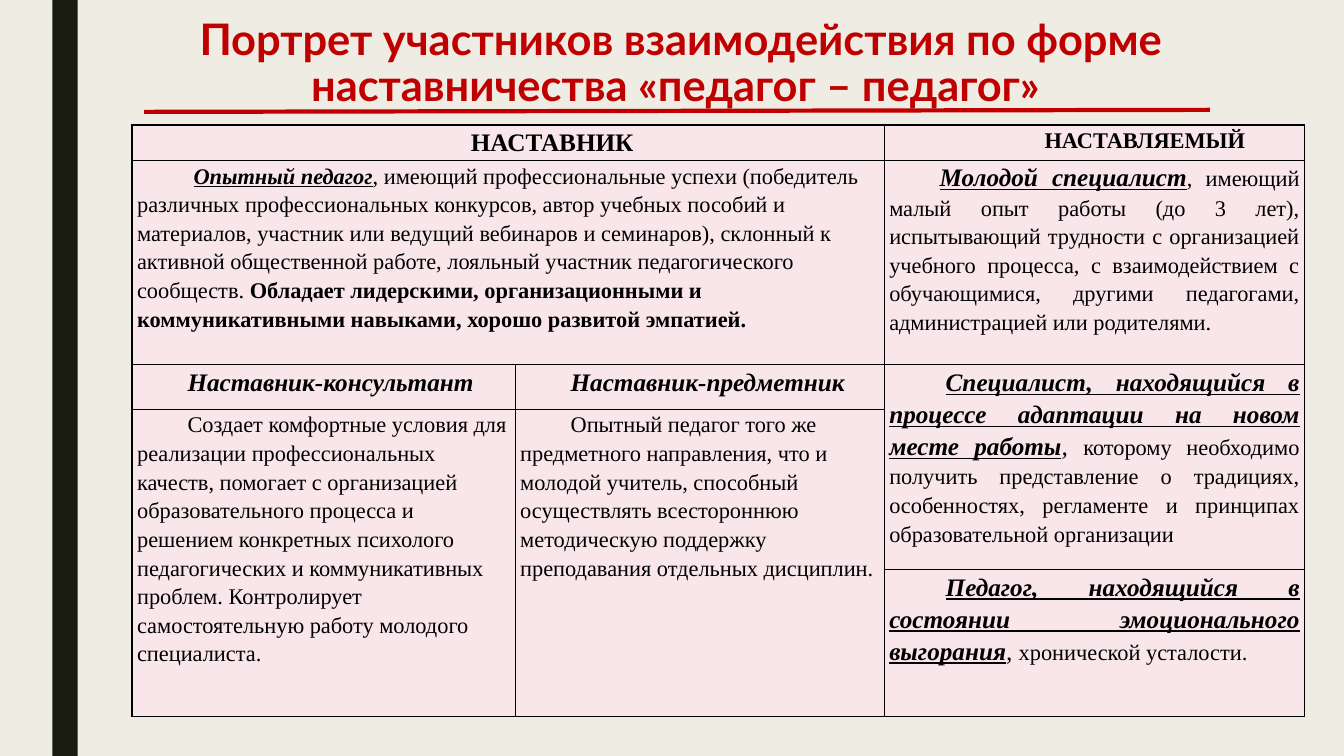
from lxml import etree
from pptx import Presentation
from pptx.dml.color import RGBColor
from pptx.enum.shapes import MSO_CONNECTOR, MSO_SHAPE
from pptx.enum.text import MSO_ANCHOR, PP_ALIGN
from pptx.oxml.ns import qn
from pptx.util import Inches, Pt

RED, BLACK, PINK = "C00000", "000000", "F9E6EA"
LEFT, JUSTIFY = PP_ALIGN.LEFT, PP_ALIGN.JUSTIFY
COLUMNS = [3.8, 3.66, 4.17]
ROWS = [0.35, 2.03, 0.44, 1.59, 1.46]

# Run styles: size, bold, italic, underline
PLAIN = (16, False, False, False)
BOLD = (16, True, False, False)
HEADING = (18, True, False, False)
SUBHEADING = (18, True, True, False)
KEY = (16, True, True, True)
BIG_KEY = (18, True, True, True)
COMMA = (18, False, True, False)

# Cells: row, column, rows spanned, columns spanned, alignment, indent, runs
PORTRAITS = [
    (0, 0, 1, 2, LEFT, 3.31, [("НАСТАВНИК", HEADING)]),
    (0, 2, 1, 1, LEFT, 1.54, [("НАСТАВЛЯЕМЫЙ", BOLD)]),
    (1, 0, 1, 2, LEFT, 0.56, [
        ("Опытный педагог", KEY),
        (", имеющий профессиональные успехи (победитель различных "
         "профессиональных конкурсов, автор учебных пособий и материалов, "
         "участник или ведущий вебинаров и семинаров), склонный к активной "
         "общественной работе, лояльный участник педагогического сообществ. ", PLAIN),
        ("Обладает лидерскими, организационными и коммуникативными навыками, "
         "хорошо развитой эмпатией.", BOLD)]),
    (1, 2, 1, 1, JUSTIFY, 0.5, [
        ("Молодой специалист", BIG_KEY),
        (", имеющий малый опыт работы (до 3 лет), испытывающий трудности с "
         "организацией учебного процесса, с взаимодействием с обучающимися, "
         "другими педагогами, администрацией или родителями.", PLAIN)]),
    (2, 0, 1, 1, LEFT, 0.5, [("Наставник-консультант", SUBHEADING)]),
    (2, 1, 1, 1, LEFT, 0.5, [("Наставник-предметник", SUBHEADING)]),
    (2, 2, 2, 1, JUSTIFY, 0.56, [
        ("Специалист, находящийся в процессе адаптации на новом месте работы", BIG_KEY),
        (", ", COMMA),
        ("которому необходимо получить представление о традициях, особенностях, "
         "регламенте и принципах образовательной организации", PLAIN)]),
    (3, 0, 2, 1, LEFT, 0.5, [
        ("Создает комфортные условия для реализации профессиональных качеств, "
         "помогает с организацией образовательного процесса и решением конкретных "
         "психолого педагогических и коммуникативных проблем. Контролирует "
         "самостоятельную работу молодого специалиста.", PLAIN)]),
    (3, 1, 2, 1, LEFT, 0.5, [
        ("Опытный педагог того же предметного направления, что и молодой учитель, "
         "способный осуществлять всестороннюю методическую поддержку преподавания "
         "отдельных дисциплин.", PLAIN)]),
    (4, 2, 1, 1, JUSTIFY, 0.56, [
        ("Педагог, находящийся в состоянии эмоционального выгорания", BIG_KEY),
        (", ", COMMA),
        ("хронической усталости.", PLAIN)]),
]


def color(value):
    return RGBColor.from_string(value)


def add_run(paragraph, text, style, font, hex_color):
    run = paragraph.add_run()
    run.text = text
    run.font.size = Pt(style[0])
    run.font.bold, run.font.italic, run.font.underline = style[1:]
    run.font.name = font
    run.font.color.rgb = color(hex_color)


def style_cell(cell):
    cell.fill.solid()
    cell.fill.fore_color.rgb = color(PINK)
    cell.margin_left = cell.margin_right = Inches(0.05)
    cell.margin_top = cell.margin_bottom = 0
    # Borders come before the fill in the cell properties
    properties = cell._tc.get_or_add_tcPr()
    for position, side in enumerate(("a:lnL", "a:lnR", "a:lnT", "a:lnB")):
        border = etree.Element(qn(side), w=str(Pt(1)))
        fill = etree.SubElement(border, qn("a:solidFill"))
        etree.SubElement(fill, qn("a:srgbClr"), val=BLACK)
        properties.insert(position, border)


def add_side_band(slide, left, top, width, height):
    band = slide.shapes.add_shape(MSO_SHAPE.RECTANGLE, Inches(left), Inches(top),
                                  Inches(width), Inches(height))
    band.shadow.inherit = False
    band.fill.solid()
    band.fill.fore_color.rgb = color("191B0E")
    band.line.fill.background()


def add_title(slide, left, top, width, height):
    title = slide.shapes.add_textbox(Inches(left), Inches(top),
                                     Inches(width), Inches(height))
    frame = title.text_frame
    frame.word_wrap = True
    frame.vertical_anchor = MSO_ANCHOR.TOP
    paragraph = frame.paragraphs[0]
    paragraph.alignment = PP_ALIGN.CENTER
    paragraph.line_spacing = 0.89
    add_run(paragraph, "Портрет участников взаимодействия по форме "
            "наставничества «педагог – педагог» ",
            (31, True, False, False), "Lato", RED)

    # Slightly slanted rule under the title
    rule = slide.shapes.add_connector(
        MSO_CONNECTOR.STRAIGHT, Inches(left - 0.07), Inches(top + 0.98),
        Inches(left + width), Inches(top + 0.96))
    rule.line.color.rgb = color(RED)
    rule.line.width = Pt(3)
    etree.SubElement(rule._element.spPr, qn("a:effectLst"))


def add_portrait_table(slide, left, top):
    table = slide.shapes.add_table(
        len(ROWS), len(COLUMNS), Inches(left), Inches(top),
        Inches(sum(COLUMNS)), Inches(sum(ROWS))).table
    for column, width in zip(table.columns, COLUMNS):
        column.width = Inches(width)
    for row, height in zip(table.rows, ROWS):
        row.height = Inches(height)
    for cell in table.iter_cells():
        style_cell(cell)

    for row, column, row_span, column_span, alignment, indent, runs in PORTRAITS:
        cell = table.cell(row, column)
        if row_span * column_span > 1:
            cell.merge(table.cell(row + row_span - 1, column + column_span - 1))
        paragraph = cell.text_frame.paragraphs[0]
        paragraph.alignment = alignment
        paragraph.line_spacing = 1.15
        paragraph._p.get_or_add_pPr().set("indent", str(Inches(indent)))
        for text, style in runs:
            add_run(paragraph, text, style, "Times New Roman", BLACK)


def main():
    deck = Presentation()
    deck.slide_width, deck.slide_height = Inches(13.33), Inches(7.5)
    slide = deck.slides.add_slide(deck.slide_layouts[6])
    slide.background.fill.solid()
    slide.background.fill.fore_color.rgb = color("EFEDE3")
    add_side_band(slide, 0.52, 0, 0.25, 7.5)
    add_title(slide, 1.5, 0.13, 10.5, 1.11)
    add_portrait_table(slide, 1.31, 1.24)
    deck.save("out.pptx")


if __name__ == "__main__":
    main()
